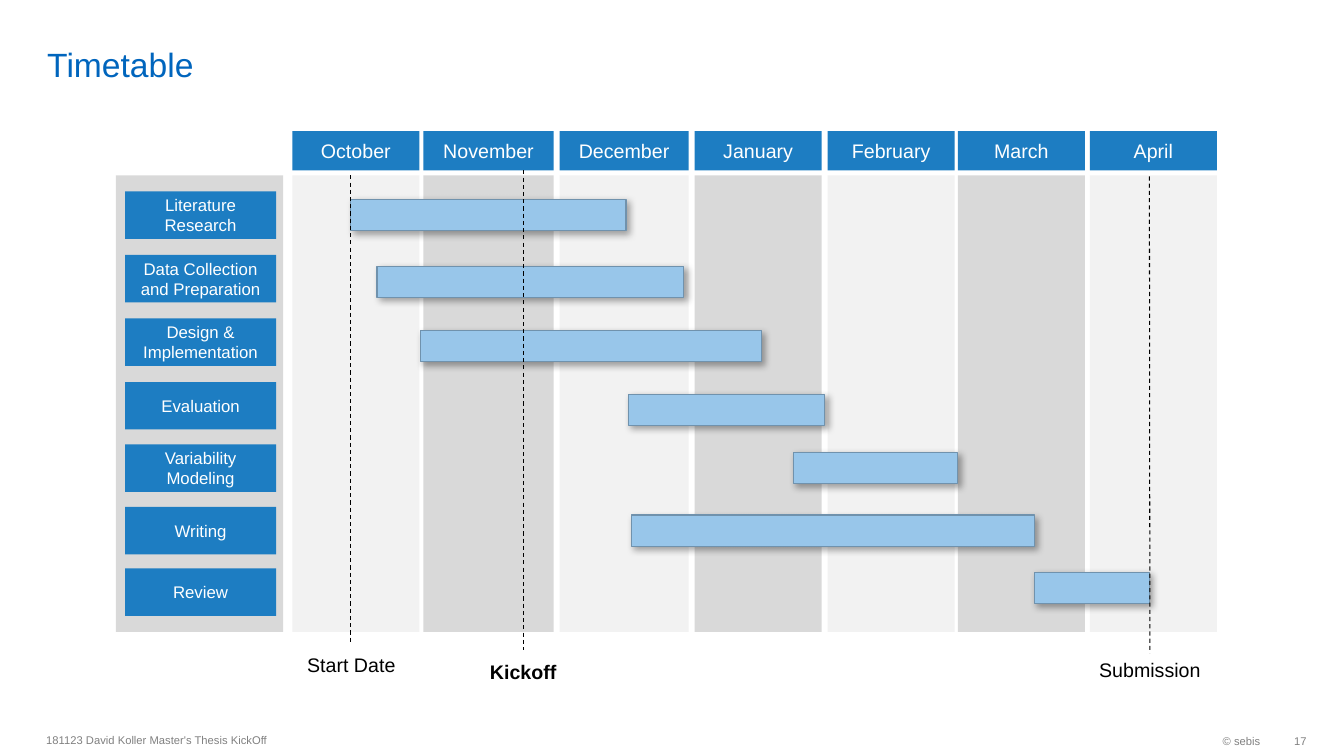
from dataclasses import dataclass
from lxml.etree import SubElement as Sub
from pptx import Presentation as Deck
from pptx.dml.color import RGBColor as Color
from pptx.enum.dml import MSO_LINE as Dash
from pptx.enum.shapes import MSO_CONNECTOR as Conn, MSO_SHAPE as Shape
from pptx.enum.text import MSO_ANCHOR as Anchor, MSO_AUTO_SIZE as Fit, PP_ALIGN as Align
from pptx.oxml.ns import qn
from pptx.util import Inches, Pt


@dataclass(frozen=True)
class Theme:
    font: str = "Arial"
    title: str = "0065BD"
    head: str = "1D7DC2"
    bar: str = "98C6EA"
    edge: str = "7092AD"
    dark: str = "D9D9D9"
    light: str = "F2F2F2"
    note: str = "808080"
    white: str = "FFFFFF"
    black: str = "000000"
    big: int = 24
    mid: int = 14
    small: int = 12
    tiny: int = 8


def write(shape, text, size, color, font, align=Align.CENTER, bold=False,
          anchor=Anchor.MIDDLE, wrap=True, pad=(0.1, 0.05, 0.1, 0.05)):
    frame = shape.text_frame
    frame.word_wrap = wrap
    frame.vertical_anchor = anchor
    (frame.margin_left, frame.margin_top,
     frame.margin_right, frame.margin_bottom) = map(Inches, pad)
    para = frame.paragraphs[0]
    para.alignment = align
    run = para.add_run()
    run.text = text
    run.font.name = font
    run.font.size = Pt(size)
    run.font.bold = bold
    run.font.color.rgb = Color.from_string(color)


class Chart:
    def __init__(self, slide, theme):
        self.slide = slide
        self.theme = theme

    def rect(self, x, y, w, h, fill):
        box = self.slide.shapes.add_shape(
            Shape.RECTANGLE, Inches(x), Inches(y), Inches(w), Inches(h))
        box.shadow.inherit = False
        box.fill.solid()
        box.fill.fore_color.rgb = Color.from_string(fill)
        box.line.fill.background()
        return box

    def label(self, text, x, y, w, h, size):
        box = self.rect(x, y, w, h, self.theme.head)
        write(box, text, size, self.theme.white, self.theme.font)

    def bar(self, x, y, w):
        box = self.rect(x, y, w, 0.31, self.theme.bar)
        box.line.color.rgb = Color.from_string(self.theme.edge)
        box.line.width = Pt(0.85)
        glow = Sub(box.element.spPr.find(qn("a:effectLst")), qn("a:outerShdw"),
                   blurRad=str(Pt(5)), dist=str(Pt(3)), dir="2700000",
                   algn="tl", rotWithShape="0")
        tint = Sub(glow, qn("a:srgbClr"), val=self.theme.black)
        Sub(tint, qn("a:alpha"), val="35000")

    def text(self, text, x, y, w, h, size, color, grow=False, **form):
        box = self.slide.shapes.add_textbox(
            Inches(x), Inches(y), Inches(w), Inches(h))
        write(box, text, size, color, self.theme.font, **form)
        if grow:
            box.text_frame.auto_size = Fit.SHAPE_TO_FIT_TEXT
        return box

    def mark(self, x, top, end, goal=None):
        line = self.slide.shapes.add_connector(
            Conn.STRAIGHT, Inches(x), Inches(top), Inches(x), Inches(end))
        line.line.color.rgb = Color.from_string(self.theme.black)
        line.line.width = Pt(0.75)
        line.line.dash_style = Dash.DASH
        Sub(line.element.spPr, qn("a:effectLst"))
        if goal is not None:
            line.end_connect(goal, 0)


MONTHS = [
    ("October", 2.9, 1.26),
    ("November", 4.2, 1.29),
    ("December", 5.55, 1.28),
    ("January", 6.89, 1.26),
    ("February", 8.21, 1.26),
    ("March", 9.5, 1.26),
    ("April", 10.81, 1.26),
]
TASKS = [
    ("Literature Research", 1.9, 3.48, 1.98, 2.73),
    ("Data Collection and Preparation", 2.53, 3.74, 2.64, 3.04),
    ("Design & Implementation", 3.16, 4.17, 3.28, 3.38),
    ("Evaluation", 3.79, 6.23, 3.91, 1.95),
    ("Variability Modeling", 4.41, 7.87, 4.49, 1.63),
    ("Writing", 5.03, 6.26, 5.11, 4),
    ("Review", 5.64, 10.26, 5.68, 1.14),
]
DATES = [
    ("Start Date", 2.58, 6.43, 1.81, 3.48, 1.74, 6.37),
    ("Kickoff", 4.07, 6.5, 2.24, 5.19, 1.69, 6.45),
    ("Submission", 10.5, 6.48, 1.81, 11.4, 1.75, 6.48),
]


def main():
    deck = Deck()
    deck.slide_width, deck.slide_height = Inches(13.33), Inches(7.5)
    theme = Theme()
    chart = Chart(deck.slides.add_slide(deck.slide_layouts[6]), theme)

    chart.text("Timetable", 0.37, 0.05, 11.58, 0.79, theme.big, theme.title,
               align=Align.LEFT, anchor=Anchor.BOTTOM, pad=(0.1, 0, 0.1, 0))
    chart.text("181123 David Koller Master's Thesis KickOff", 0.36, 7.18, 6.3, 0.32,
               theme.tiny, theme.note, align=Align.LEFT)
    chart.text("© sebis", 10.26, 7.19, 2.34, 0.32, theme.tiny, theme.note,
               align=Align.RIGHT, wrap=False)
    chart.text("17", 12.6, 7.19, 0.36, 0.32, theme.tiny, theme.note,
               align=Align.RIGHT, wrap=False, pad=(0.1, 0.05, 0, 0.05))

    chart.rect(1.15, 1.74, 1.66, 4.53, theme.dark)
    for i, (name, x, w) in enumerate(MONTHS):
        chart.label(name, x, 1.3, w, 0.39, theme.mid)
        chart.rect(x, 1.74, w, 4.53, theme.dark if i % 2 else theme.light)

    for name, top, x, y, w in TASKS:
        chart.label(name, 1.24, top, 1.5, 0.47, theme.small)
        chart.bar(x, y, w)

    for name, left, y, w, x, top, end in DATES:
        box = chart.text(name, left, y, w, 0.34, theme.mid, theme.black, grow=True,
                         anchor=Anchor.TOP, bold=name == "Kickoff")
        chart.mark(x, top, end, box if end == y else None)

    deck.save("out.pptx")


if __name__ == "__main__":
    main()
